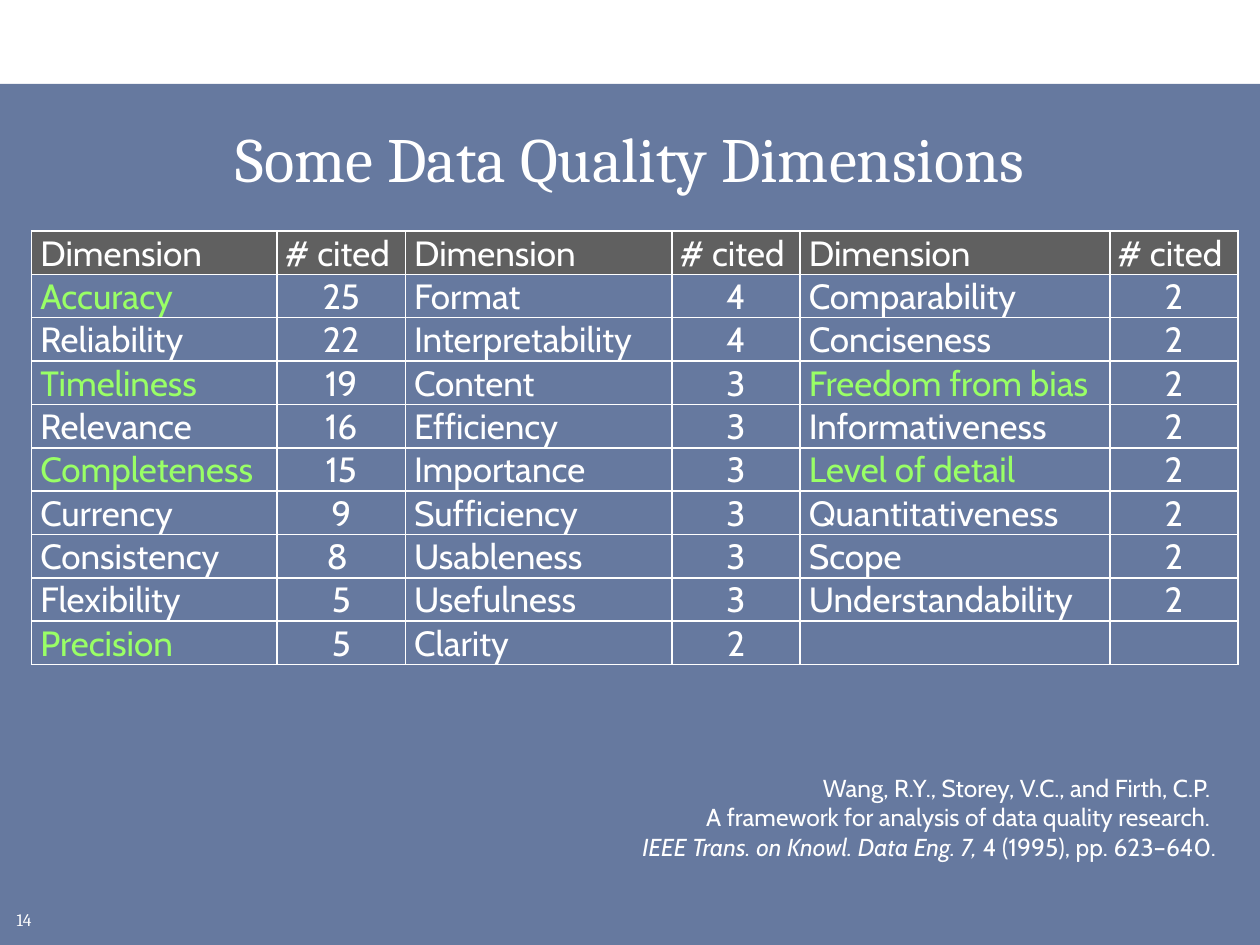
from lxml import etree
from pptx import Presentation
from pptx.dml.color import RGBColor
from pptx.enum.shapes import MSO_SHAPE
from pptx.enum.text import MSO_ANCHOR, PP_ALIGN
from pptx.oxml import parse_xml
from pptx.oxml.ns import nsdecls, qn
from pptx.util import Inches, Pt

RECTANGLE = MSO_SHAPE.RECTANGLE
TOP, MIDDLE, BOTTOM = MSO_ANCHOR.TOP, MSO_ANCHOR.MIDDLE, MSO_ANCHOR.BOTTOM
LEFT, CENTER, RIGHT = PP_ALIGN.LEFT, PP_ALIGN.CENTER, PP_ALIGN.RIGHT

THEME = {
    "white": RGBColor(0xFF, 0xFF, 0xFF),
    "navy": RGBColor(0x00, 0x20, 0x60),
    "gray": RGBColor(0x60, 0x60, 0x60),
    "green": RGBColor(0x99, 0xFF, 0x66),
    "panel_alpha": "60000",
    "title": {"name": "Cambria", "size": Pt(36)},
    "number": {"name": "Cambria", "size": Pt(10)},
    "table": {"name": "Cabin", "size": Pt(20)},
    "citation": {"name": "Cabin", "size": Pt(14)},
}

presentation = Presentation()
presentation.slide_width, presentation.slide_height = Inches(10), Inches(7.5)
slide = presentation.slides.add_slide(presentation.slide_layouts[6])
UNIT = presentation.slide_width / 120


def grid(*counts):
    return [round(count * UNIT) for count in counts]


def add_run(paragraph, text, style, color=THEME["white"], italic=False):
    run = paragraph.add_run()
    run.text = text
    for name, value in {**style, "italic": italic}.items():
        setattr(run.font, name, value)
    run.font.color.rgb = color


panel = slide.shapes.add_shape(RECTANGLE, *grid(0, 8, 120, 82))
panel.shadow.inherit = False
panel.fill.solid()
panel.fill.fore_color.rgb = THEME["navy"]
panel.line.fill.background()
panel_color = panel.fill._xPr.find(".//" + qn("a:srgbClr"))
etree.SubElement(panel_color, qn("a:alpha"), val=THEME["panel_alpha"])

text_boxes = [
    ("number", (0.4, 86, 4.7, 3), TOP, LEFT, [[("14", False)]]),
    ("title", (3, 10, 114, 10), MIDDLE, CENTER, [[("Some Data Quality Dimensions", False)]]),
    ("citation", (21, 73, 96, 9.7), TOP, RIGHT, [
        [("Wang, R.Y., Storey, V.C., and Firth, C.P. ", False)],
        [("A framework for analysis of data quality research. ", False)],
        [("IEEE Trans. on Knowl. Data Eng. 7, ", True), ("4 (1995), pp. 623–640.", False)],
    ]),
]
for style, place, anchor, alignment, lines in text_boxes:
    text_frame = slide.shapes.add_textbox(*grid(*place)).text_frame
    text_frame.word_wrap = True
    text_frame.vertical_anchor = anchor
    for index, line in enumerate(lines):
        paragraph = text_frame.add_paragraph() if index else text_frame.paragraphs[0]
        paragraph.alignment = alignment
        for text, italic in line:
            add_run(paragraph, text, THEME[style], italic=italic)

rows = [
    ("Dimension", "# cited ") * 3,
    ("Accuracy", "25", "Format", "4", "Comparability", "2"),
    ("Reliability", "22", "Interpretability", "4", "Conciseness", "2"),
    ("Timeliness", "19", "Content", "3", "Freedom from bias", "2"),
    ("Relevance", "16", "Efficiency", "3", "Informativeness", "2"),
    ("Completeness", "15", "Importance", "3", "Level of detail", "2"),
    ("Currency", "9", "Sufficiency", "3", "Quantitativeness", "2"),
    ("Consistency", "8 ", "Usableness", "3", "Scope", "2"),
    ("Flexibility", "5", "Usefulness", "3", "Understandability", "2"),
    ("Precision", "5", "Clarity", "2", "", ""),
]
highlighted = {
    "Accuracy", "Timeliness", "Completeness", "Precision",
    "Freedom from bias", "Level of detail",
}
column_widths = grid(23.4, 12.2, 25.4, 12.2, 29.5, 12.2)
row_height = grid(4.13)[0]
table = slide.shapes.add_table(
    len(rows), len(column_widths), *grid(3, 22), sum(column_widths), row_height * len(rows)
).table
for column, width in zip(table.columns, column_widths):
    column.width = width

for row_index, values in enumerate(rows):
    table.rows[row_index].height = row_height
    for column_index, value in enumerate(values):
        cell = table.cell(row_index, column_index)
        is_name = column_index % 2 == 0
        cell_format = {
            "vertical_anchor": BOTTOM,
            "margin_left": Inches(0.07 if is_name else 0.01),
            "margin_right": Inches(0.01),
            "margin_top": Inches(0.01),
            "margin_bottom": 0,
        }
        for name, setting in cell_format.items():
            setattr(cell, name, setting)
        properties = cell._tc.get_or_add_tcPr()
        for side in ("lnL", "lnR", "lnT", "lnB"):
            properties.append(parse_xml(
                f'<a:{side} {nsdecls("a")} w="{Pt(1)}"><a:solidFill>'
                f'<a:srgbClr val="{THEME["white"]}"/></a:solidFill></a:{side}>'
            ))
        if row_index == 0:
            cell.fill.solid()
            cell.fill.fore_color.rgb = THEME["gray"]
        else:
            cell.fill.background()
        paragraph = cell.text_frame.paragraphs[0]
        paragraph.alignment = LEFT if is_name else CENTER
        if value:
            color = THEME["green" if value in highlighted else "white"]
            add_run(paragraph, value, THEME["table"], color)

presentation.save("out.pptx")
